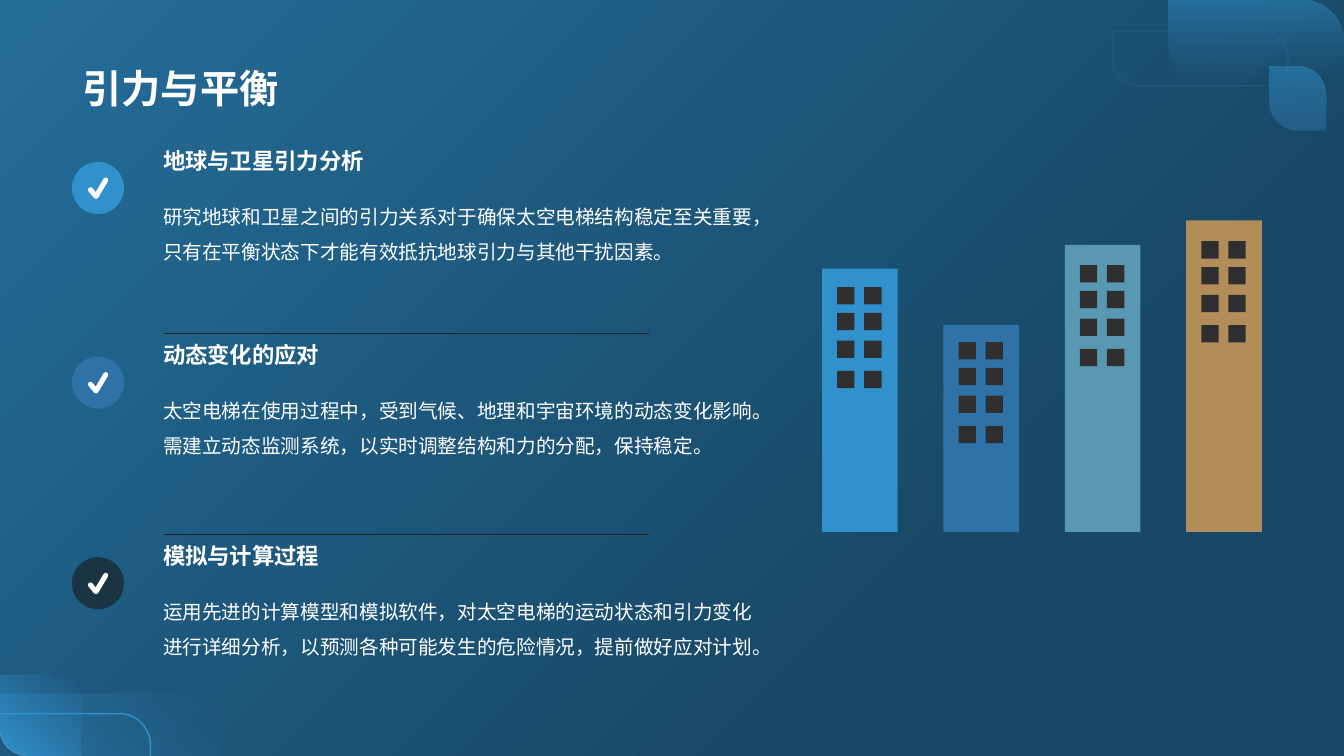
from math import cos, pi, sin

from lxml import etree
from pptx import Presentation
from pptx.dml.color import RGBColor
from pptx.enum.shapes import MSO_CONNECTOR, MSO_SHAPE
from pptx.enum.text import MSO_ANCHOR, PP_ALIGN
from pptx.oxml.ns import qn
from pptx.util import Pt

RECT, OVAL, LEAF = MSO_SHAPE.RECTANGLE, MSO_SHAPE.OVAL, MSO_SHAPE.ROUND_2_DIAG_RECTANGLE
STRAIGHT = MSO_CONNECTOR.STRAIGHT
LEFT, TOP, BOTTOM = PP_ALIGN.LEFT, MSO_ANCHOR.TOP, MSO_ANCHOR.BOTTOM

WHITE = RGBColor(0xFF, 0xFF, 0xFF)
SKY = RGBColor(0x30, 0x91, 0xCC)
BLUE = RGBColor(0x2F, 0x72, 0xA7)
NAVY = RGBColor(0x1A, 0x34, 0x44)
TEAL = RGBColor(0x59, 0x98, 0xB2)
SAND = RGBColor(0xB2, 0x8C, 0x59)
CHARCOAL = RGBColor(0x2F, 0x2F, 0x2F)
RULE = RGBColor(0x23, 0x23, 0x23)
BACK_LIGHT = RGBColor(0x24, 0x6D, 0x99)
BACK_DARK = RGBColor(0x18, 0x48, 0x66)
FONT = "Noto Sans CJK SC"

ITEMS = [  # top, badge colour, heading, body
    (101.5, SKY, "地球与卫星引力分析",
     "研究地球和卫星之间的引力关系对于确保太空电梯结构稳定至关重要，"
     "只有在平衡状态下才能有效抵抗地球引力与其他干扰因素。"),
    (240.5, BLUE, "动态变化的应对",
     "太空电梯在使用过程中，受到气候、地理和宇宙环境的动态变化影响。"
     "需建立动态监测系统，以实时调整结构和力的分配，保持稳定。"),
    (383.8, NAVY, "模拟与计算过程",
     "运用先进的计算模型和模拟软件，对太空电梯的运动状态和引力变化"
     "进行详细分析，以预测各种可能发生的危险情况，提前做好应对计划。"),
]
BUILDINGS = [  # height, gap above the windows, colour
    (188, 13, SKY), (148, 12.3, BLUE), (205, 14.3, TEAL), (222.5, 14.8, SAND),
]
WINDOW_ROWS = (0, 18.5, 38.3, 59.9)


def set_alpha(colour_element, percent):
    etree.SubElement(colour_element, qn("a:alpha")).set("val", str(percent * 1000))


def set_gradient(fill, start, end, angle, end_position=1.0):
    """Linear gradient; the angle is counter-clockwise."""
    fill.gradient()
    fill.gradient_angle = angle
    first, last = fill.gradient_stops
    first.color.rgb, first.position = start, 0
    last.color.rgb, last.position = end, end_position


def add_solid(shapes, kind, x, y, w, h, colour):
    solid = shapes.add_shape(kind, Pt(x), Pt(y), Pt(w), Pt(h))
    solid.shadow.inherit = False
    solid.fill.solid()
    solid.fill.fore_color.rgb = colour
    solid.line.fill.background()
    return solid


def add_stroke(shapes, points, colour, width):
    """Open outline through the points, with round ends."""
    builder = shapes.build_freeform(Pt(points[0][0]), Pt(points[0][1]))
    builder.add_line_segments([(Pt(x), Pt(y)) for x, y in points[1:]], close=False)
    stroke = builder.convert_to_shape()
    stroke.shadow.inherit = False
    stroke.fill.background()
    stroke.line.color.rgb = colour
    stroke.line.width = Pt(width)
    line = stroke.line._get_or_add_ln()
    line.set("cap", "rnd")
    etree.SubElement(line, qn("a:round"))


def write_text(frame, text, size, bold=False, spacing=None, anchor=TOP, bottom=3.6):
    frame.word_wrap = True
    frame.vertical_anchor = anchor
    frame.margin_left = frame.margin_right = Pt(7.2)
    frame.margin_top, frame.margin_bottom = Pt(3.6), Pt(bottom)
    paragraph = frame.paragraphs[0]
    paragraph.alignment = LEFT
    if spacing:
        paragraph.line_spacing = spacing
    run = paragraph.add_run()
    run.text = text
    run.font.size, run.font.bold, run.font.name = Pt(size), bold, FONT
    run.font.color.rgb = WHITE
    etree.SubElement(run.font._element, qn("a:ea")).set("typeface", FONT)


def add_leaf(shapes, x, y, w, h, rounding, angle, start_alpha, end_alpha):
    leaf = add_solid(shapes, LEAF, x, y, w, h, SKY)
    leaf.adjustments[0], leaf.adjustments[1] = 0, rounding
    set_gradient(leaf.fill, BLUE, SKY, angle)
    stops = leaf._element.spPr.find(qn("a:gradFill")).iter(qn("a:srgbClr"))
    for colour, alpha in zip(stops, (start_alpha, end_alpha)):
        set_alpha(colour, alpha)


def add_bottom_corner(shapes, x, bottom):
    add_leaf(shapes, x, bottom - 57.6, 57.2, 57.6, 0.357, 225, 0, 100)
    add_leaf(shapes, x, bottom - 44.6, 158.4, 44.6, 0.5, 225, 0, 50)
    radius, top, right = 22.3, bottom - 30.3, x + 107.4
    curve = [(right - radius + radius * sin(step * pi / 24),
              top + radius - radius * cos(step * pi / 24)) for step in range(13)]
    add_stroke(shapes, [(x, top)] + curve + [(right, bottom)], SKY, 1)


def add_top_corner(shapes, right, y):
    add_leaf(shapes, right - 125.3, y, 125.3, 61.2, 0.5, 90, 0, 50)
    outline = add_solid(shapes, LEAF, right - 165.3, y + 22.3, 125.3, 38.9, BLUE)
    outline.adjustments[0], outline.adjustments[1] = 0, 0.5
    outline.fill.background()
    outline.line.color.rgb = BLUE
    outline.line.width = Pt(1)
    set_alpha(next(outline.line._get_or_add_ln().iter(qn("a:srgbClr"))), 25)
    add_leaf(shapes, right - 53.1, y + 47.3, 40.3, 46.1, 0.5, 90, 50, 50)


def add_title(title, x, y, w, h):
    title.left, title.top, title.width, title.height = Pt(x), Pt(y), Pt(w), Pt(h)
    write_text(title.text_frame, "引力与平衡", 28, bold=True, anchor=BOTTOM, bottom=1)


def add_building(shapes, x, base, height, window_gap, colour):
    parts = shapes.add_group_shape().shapes
    top = base - height
    add_solid(parts, RECT, x, top, 54, height, colour)
    for row in WINDOW_ROWS:
        for column in range(2):
            add_solid(parts, RECT, x + 10.8 + 19.3 * column, top + window_gap + row,
                      12.4, 12.4, CHARCOAL)


def add_item(shapes, x, y, colour, heading, body):
    # Badge with its tick
    add_solid(shapes, OVAL, x, y + 14.2, 37.2, 37.2, colour)
    centre_x, centre_y = x + 18.6, y + 32.8
    tick = [(-5.4, 1.2), (-1.4, 6), (5.5, -5.7)]
    add_stroke(shapes, [(centre_x + dx, centre_y + dy) for dx, dy in tick], WHITE, 3.6)
    # Heading and body
    for offset, height, text, style in (
            (0, 26.6, heading, {"size": 16, "bold": True}),
            (32.6, 55.4, body, {"size": 14, "spacing": 1.5})):
        box = shapes.add_textbox(Pt(x + 58), Pt(y + offset), Pt(436.3), Pt(height))
        write_text(box.text_frame, text, **style)


def add_divider(shapes, x, y, w):
    divider = shapes.add_connector(STRAIGHT, Pt(x), Pt(y), Pt(x + w), Pt(y))
    divider.line.color.rgb = RULE
    divider.line.width = Pt(0.25)
    etree.SubElement(divider._element.spPr, qn("a:effectLst"))


def main():
    deck = Presentation()
    deck.slide_width, deck.slide_height = Pt(960), Pt(540)
    slide = deck.slides.add_slide(deck.slide_layouts[5])
    shapes = slide.shapes
    set_gradient(slide.background.fill, BACK_LIGHT, BACK_DARK, 315, 0.72)
    add_bottom_corner(shapes, 0, 540)
    add_top_corner(shapes, 960, 0)
    add_title(shapes.title, 51.8, 10, 855.4, 70.6)
    for index, building in enumerate(BUILDINGS):
        add_building(shapes, 587.2 + 86.7 * index, 380, *building)
    for top, *content in ITEMS:
        add_item(shapes, 51.4, top, *content)
    for y in (238.2, 381.6):
        add_divider(shapes, 117.2, y, 346.4)
    deck.save("out.pptx")


if __name__ == "__main__":
    main()
